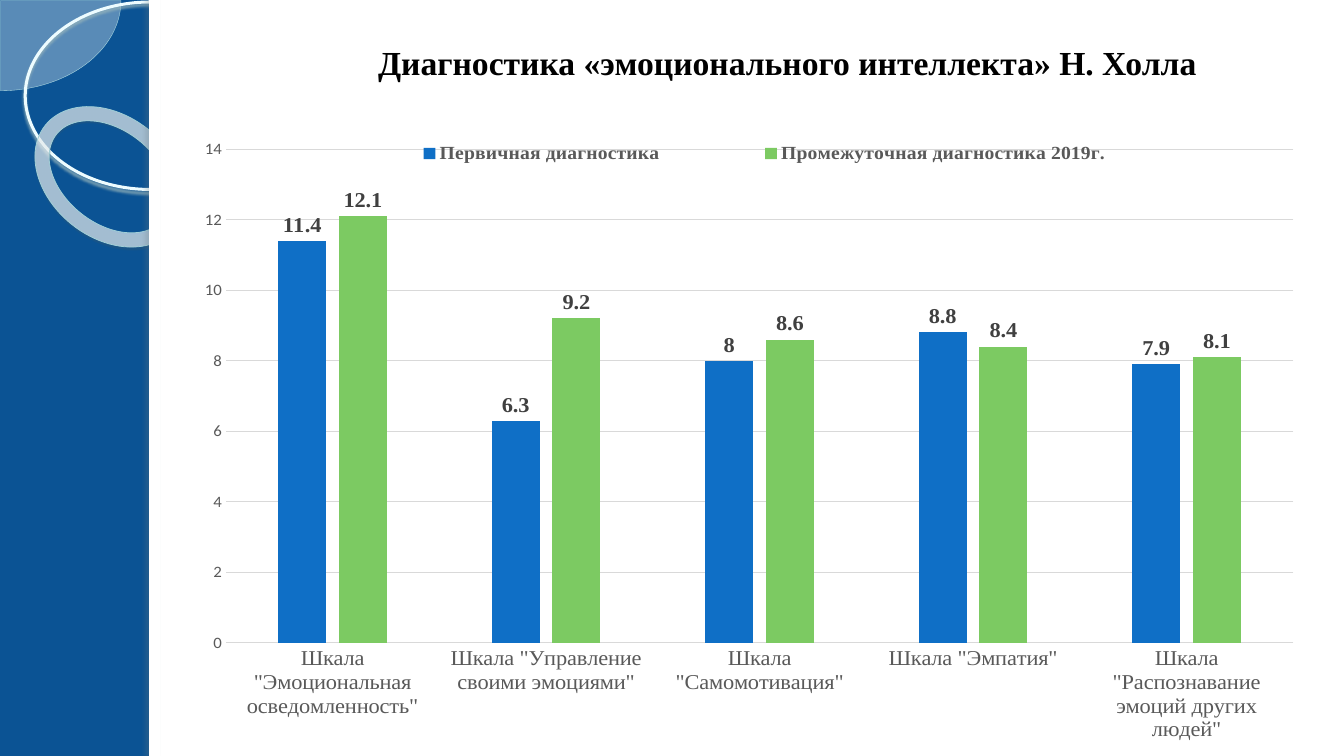
from lxml.etree import SubElement
from pptx import Presentation
from pptx.chart.data import CategoryChartData
from pptx.dml.color import RGBColor
from pptx.enum.chart import XL_CHART_TYPE, XL_LABEL_POSITION, XL_LEGEND_POSITION, XL_TICK_MARK
from pptx.enum.shapes import MSO_SHAPE
from pptx.enum.text import MSO_ANCHOR, PP_ALIGN
from pptx.oxml import parse_xml
from pptx.oxml.ns import nsdecls, qn
from pptx.util import Inches, Pt


def rgb(value):
    return RGBColor.from_string(value)


def style_font(font, size, color, name="Times New Roman", bold=False):
    for key, value in {"size": Pt(size), "name": name, "bold": bold}.items():
        setattr(font, key, value)
    font.color.rgb = rgb(color)


deck = Presentation()
deck.slide_width, deck.slide_height = Inches(13.33), Inches(7.5)
slide = deck.slides.add_slide(deck.slide_layouts[5])
slide.background.fill.solid()
slide.background.fill.fore_color.rgb = rgb("0B5394")

decorations = [
    {"kind": MSO_SHAPE.PIE, "box": (-1.19, -0.89, 2.39, 1.79), "adjust": (0, 54.02),
     "fill": ("F8FEFF", 33), "line": ("AFDBE2", 0.25)},
    {"kind": MSO_SHAPE.OVAL, "box": (0.25, 0.02, 2.48, 1.86),
     "line": ("EDFCFF", 2.15), "shadow": ("9CB9BE", 85, 2, 2, 90)},
    {"kind": MSO_SHAPE.DONUT, "box": (0.27, 1.15, 1.64, 1.21), "adjust": (0.118,), "turn": 38.6,
     "fill": ("F9FEFF", 62), "line": ("A1CFD6", 0.58), "shadow": ("4B5E61", 35, 1, 1.2, 75)},
    {"kind": MSO_SHAPE.RECTANGLE, "box": (1.48, 0, 11.85, 7.5), "fill": ("FFFFFF", 100)},
    {"kind": MSO_SHAPE.RECTANGLE, "box": (1.48, 0, 0.11, 7.5), "fill": ("FFFFFF", 100),
     "shadow": ("6C7A7C", 25, 3, 3, 180)},
]
for item in decorations:
    ornament = slide.shapes.add_shape(item["kind"], *map(Inches, item["box"]))
    ornament.rotation = item.get("turn", 0)
    ornament.shadow.inherit = False
    for index, value in enumerate(item.get("adjust", ())):
        ornament.adjustments[index] = value
    properties = ornament._element.spPr
    if "fill" in item:
        color, opacity = item["fill"]
        ornament.fill.solid()
        ornament.fill.fore_color.rgb = rgb(color)
        tint = properties.find(qn("a:solidFill"))[0]
        SubElement(tint, qn("a:alpha"), val=str(opacity * 1000))
    else:
        ornament.fill.background()
    if "line" in item:
        color, width = item["line"]
        ornament.line.color.rgb = rgb(color)
        ornament.line.width = Pt(width)
    else:
        ornament.line.fill.background()
    if "shadow" in item:
        color, opacity, blur, distance, angle = item["shadow"]
        shade = SubElement(properties.find(qn("a:effectLst")), qn("a:outerShdw"),
                           blurRad=str(Pt(blur)), dist=str(Pt(distance)),
                           dir=str(angle * 60000), algn="tl", rotWithShape="0")
        tint = SubElement(shade, qn("a:srgbClr"), val=color)
        SubElement(tint, qn("a:alpha"), val=str(opacity * 1000))

heading = slide.shapes.title
slide.shapes._spTree.append(heading._element)
heading.left, heading.top, heading.width, heading.height = map(Inches, (3.34, -0.19, 9.02, 1.62))
heading.text_frame.text = "Диагностика «эмоционального интеллекта» Н. Холла "
heading.text_frame.vertical_anchor = MSO_ANCHOR.MIDDLE
heading.text_frame.word_wrap = True
heading_line = heading.text_frame.paragraphs[0]
heading_line.alignment = PP_ALIGN.CENTER
style_font(heading_line.runs[0].font, 24, "000000", bold=True)

scores = CategoryChartData()
scores.categories = [
    'Шкала "Эмоциональная осведомленность"',
    'Шкала "Управление своими эмоциями"',
    'Шкала "Самомотивация"',
    'Шкала "Эмпатия"',
    'Шкала "Распознавание эмоций других людей"',
]
scores.add_series("Первичная диагностика", (11.4, 6.3, 8, 8.8, 7.9))
scores.add_series("Промежуточная диагностика 2019г.", (12.1, 9.2, 8.6, 8.4, 8.1))
chart = slide.shapes.add_chart(XL_CHART_TYPE.COLUMN_CLUSTERED,
                               *map(Inches, (1.81, 0.62, 11.3, 6.74)), scores).chart
chart.has_title = False
style_font(chart.font, 10, "000000", "Calibri")

columns = chart.plots[0]
for key, value in {"gap_width": 219, "overlap": -27, "vary_by_categories": False}.items():
    setattr(columns, key, value)
for diagnosis, color in zip(columns.series, ("0F6FC6", "7CCA62")):
    diagnosis.format.fill.solid()
    diagnosis.format.fill.fore_color.rgb = rgb(color)
    diagnosis.invert_if_negative = False
    labels = diagnosis.data_labels
    labels.show_value = True
    labels.position = XL_LABEL_POSITION.OUTSIDE_END
    style_font(labels.font, 16, "404040", bold=True)

scales, points = chart.category_axis, chart.value_axis
for axis in (scales, points):
    axis.major_tick_mark = axis.minor_tick_mark = XL_TICK_MARK.NONE
style_font(scales.tick_labels.font, 16, "595959")
style_font(points.tick_labels.font, 12, "595959", "Calibri")
for key, value in {"minimum_scale": 0, "maximum_scale": 14, "major_unit": 2,
                   "has_major_gridlines": True}.items():
    setattr(points, key, value)
points.format.line.fill.background()
for rule in (scales.format.line, points.major_gridlines.format.line):
    rule.color.rgb = rgb("D9D9D9")
    rule.width = Pt(0.75)

chart.has_legend = True
legend = chart.legend
legend.position = XL_LEGEND_POSITION.BOTTOM
legend.include_in_layout = False
style_font(legend.font, 14, "595959", bold=True)

plot_area = chart._chartSpace.chart.plotArea
for part, target, box in (
    (plot_area, '<c:layoutTarget val="inner"/>', (0.038, 0.135, 0.937, 0.77)),
    (legend._element, "", (0.125, 0.117, 0.772, 0.05)),
):
    for previous in part.findall(qn("c:layout")):
        part.remove(previous)
    x, y, width, height = box
    layout = parse_xml(
        f'<c:layout {nsdecls("c")}><c:manualLayout>{target}'
        '<c:xMode val="edge"/><c:yMode val="edge"/>'
        f'<c:x val="{x}"/><c:y val="{y}"/><c:w val="{width}"/><c:h val="{height}"/>'
        '</c:manualLayout></c:layout>')
    part.insert(0 if target else 1, layout)

deck.save("out.pptx")
